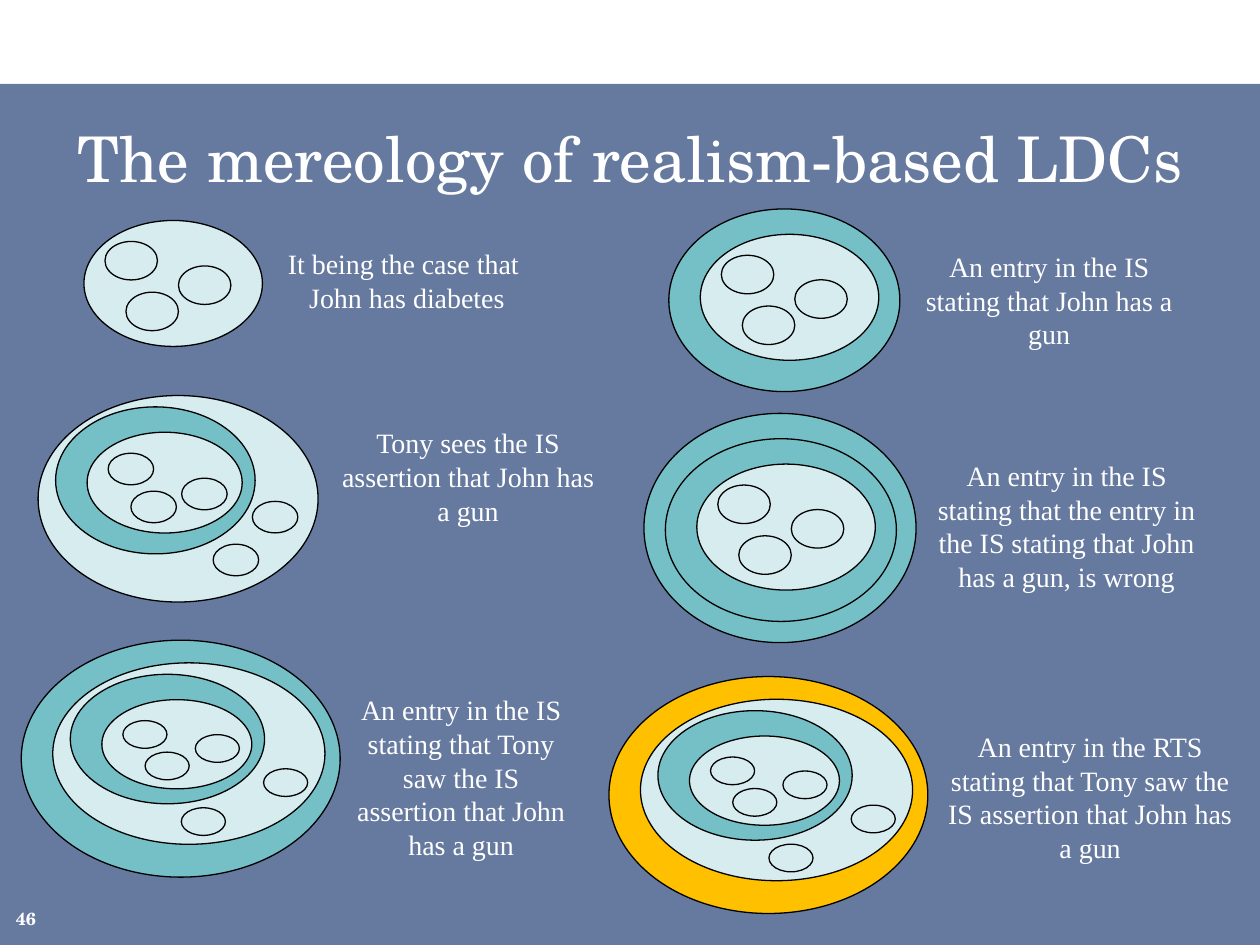
"""Builds the slide on the mereology of realism-based LDCs."""
from lxml import etree
from pptx import Presentation
from pptx.dml.color import RGBColor
from pptx.enum.shapes import MSO_SHAPE
from pptx.enum.text import MSO_ANCHOR, MSO_AUTO_SIZE, PP_ALIGN
from pptx.oxml.ns import qn
from pptx.util import Pt

RECTANGLE, ELLIPSE = MSO_SHAPE.RECTANGLE, MSO_SHAPE.OVAL
LEFT, CENTER = PP_ALIGN.LEFT, PP_ALIGN.CENTER
TOP, MIDDLE = MSO_ANCHOR.TOP, MSO_ANCHOR.MIDDLE
GROW = MSO_AUTO_SIZE.SHAPE_TO_FIT_TEXT

NAVY, WHITE, BLACK = "002060", "FFFFFF", "000000"
PALE, TEAL, AMBER = "D6ECEE", "74C0C6", "FFC000"
HEADING_FONT, LABEL_FONT = "TeX Gyre Schola", "Times New Roman"


def colour(value):
    return RGBColor.from_string(value)


def write(box, text, *, font, size, bold=False, align=CENTER, anchor=TOP, wrap=True):
    frame = box.text_frame
    frame.word_wrap = wrap
    frame.vertical_anchor = anchor
    for index, line in enumerate(text.split("\n")):
        para = frame.add_paragraph() if index else frame.paragraphs[0]
        para.alignment = align
        span = para.add_run()
        span.text = line
        span.font.name = font
        span.font.size = Pt(size)
        span.font.bold = bold
        span.font.color.rgb = colour(WHITE)


class Painter:
    def __init__(self, page):
        self.page = page

    def shape(self, parent, kind, area, fill):
        shape = parent.shapes.add_shape(kind, *map(Pt, area))
        shape.shadow.inherit = False
        shape.fill.solid()
        shape.fill.fore_color.rgb = colour(fill)
        return shape

    def backdrop(self, area, fill, opacity):
        shape = self.shape(self.page, RECTANGLE, area, fill)
        shape.line.fill.background()
        tint = shape.element.spPr.find(".//" + qn("a:srgbClr"))
        etree.SubElement(tint, qn("a:alpha"), val=str(opacity * 1000))

    def ellipse(self, parent, area, fill):
        shape = self.shape(parent, ELLIPSE, area, fill)
        shape.line.color.rgb = colour(BLACK)
        shape.line.width = Pt(0.75)

    def text(self, parent, area, text, **style):
        box = parent.shapes.add_textbox(*map(Pt, area))
        write(box, text, **style)
        return box

    def figure(self, origin, parts, area, label, wrap=True):
        group = self.page.shapes.add_group_shape()
        left, top = origin
        for x, y, width, height, fill in parts:
            self.ellipse(group, (left + x, top + y, width, height), fill)
        box = self.text(group, area, label, font=LABEL_FONT, size=16, wrap=wrap)
        box.text_frame.auto_size = GROW


def cells(width, height, places):
    return [(x, y, width, height, PALE) for x, y in places]


def enclose(width, height, fill, x, y, inner):
    moved = [(x + left, y + top, *rest) for left, top, *rest in inner]
    return [(0, 0, width, height, fill), *moved]


FACT = [(0, 0, 102, 72, PALE), *cells(30, 22, [(12, 12), (54, 26), (24, 41)])]
ENTRY = enclose(132, 104.4, TEAL, 18, 14.5, FACT)
DENIAL = enclose(155.5, 131, TEAL, 12.2, 14.5, ENTRY)
SIGHT = [
    (0, 0, 160, 118, PALE), (10, 6.5, 114, 84, TEAL), (28, 21, 88.6, 57.6, PALE),
    *cells(26, 18, [(40, 33), (82, 47.3), (53, 54.7), (122.4, 60.5), (100, 85)]),
]
SMALL_SIGHT = [
    (0, 0, 155.5, 103.7, PALE), (10, 6.5, 111, 74, TEAL), (28, 21, 85.7, 51, PALE),
    *cells(25.2, 15.8, [(40, 33), (81.4, 41), (52.7, 51), (120.4, 60.5), (73.4, 82.8)]),
]
SIGHT_ENTRY, TRACKED_SIGHT = (
    enclose(182.2, 135.4, fill, 18, 13, SMALL_SIGHT) for fill in (TEAL, AMBER)
)

FIGURES = [
    ((48, 126), FACT, (156.2, 137.5, 152.6, 46),
     "It being the case that \nJohn has diabetes", False),
    ((382.2, 119.4), ENTRY, (517, 139, 165, 65.5),
     "An entry in the IS\nstating that John has a gun"),
    ((368, 236.2), DENIAL, (527, 258.5, 165, 85),
     "An entry in the IS stating that the entry in the IS stating that John has a gun, is wrong"),
    ((21.8, 226), SIGHT, (184.3, 239.8, 166.3, 65.5),
     "Tony sees the IS assertion that John has a gun"),
    ((12.2, 365.8), SIGHT_ENTRY, (194.4, 392.4, 138.2, 104.4),
     "An entry in the IS stating that Tony saw the IS assertion that John has a gun"),
    ((348, 386.6), TRACKED_SIGHT, (530, 413.3, 185.8, 85),
     "An entry in the RTS stating that Tony saw the IS assertion that John has a gun"),
]


def main():
    deck = Presentation()
    deck.slide_width, deck.slide_height = Pt(720), Pt(540)
    page = deck.slides.add_slide(deck.slide_layouts[6])
    painter = Painter(page)
    painter.backdrop((0, 48, 720, 492), NAVY, 60)
    painter.text(page, (2, 516, 28, 18), "46", font=HEADING_FONT, size=10,
                 bold=True, align=LEFT, anchor=MIDDLE)
    painter.text(page, (18, 60, 684, 60), "The mereology of realism-based LDCs",
                 font=HEADING_FONT, size=36, anchor=MIDDLE)
    for figure in FIGURES:
        painter.figure(*figure)
    deck.save("out.pptx")


if __name__ == "__main__":
    main()
